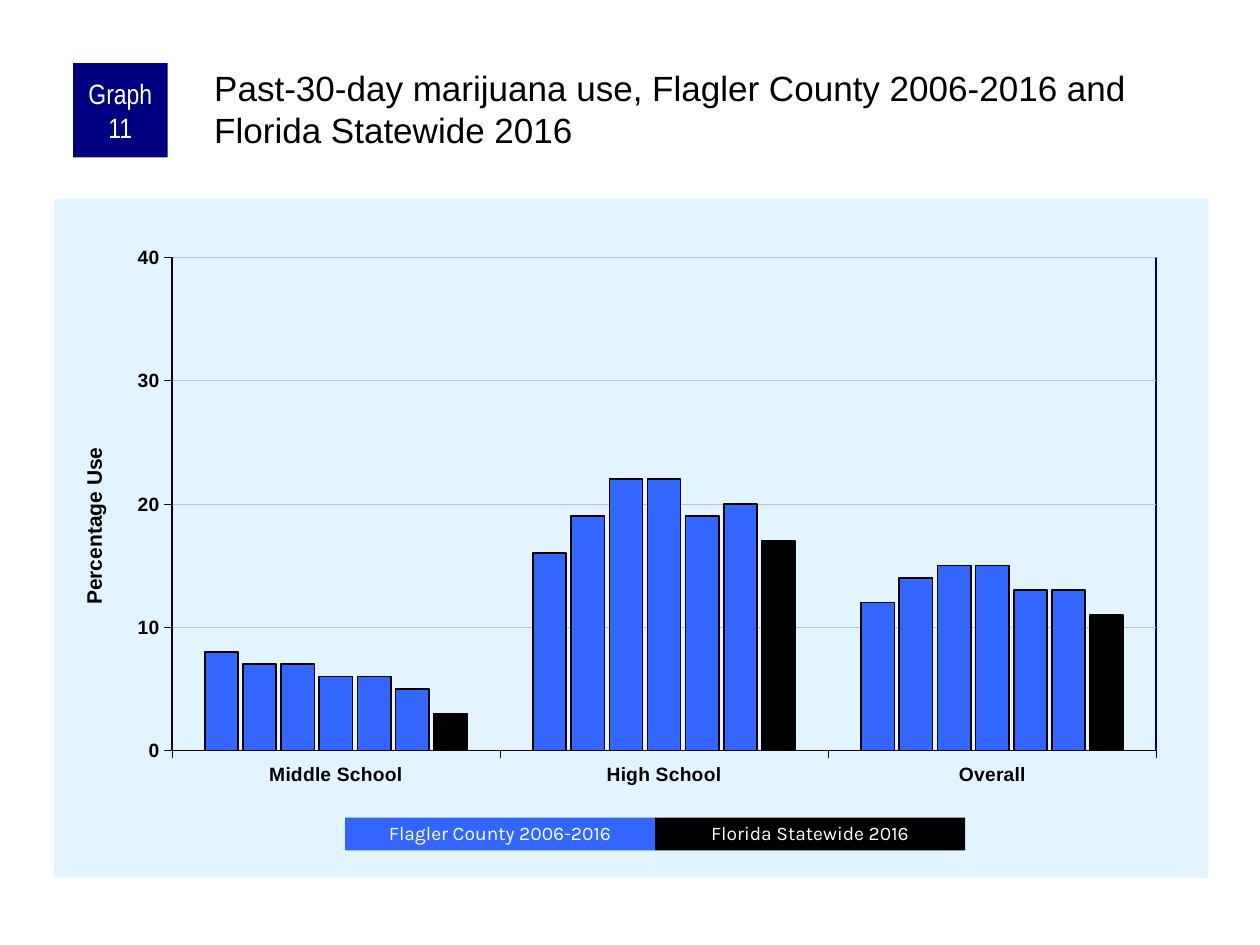
"""Build the slide on past-30-day marijuana use in Flagler County."""
from dataclasses import dataclass

from pptx import Presentation
from pptx.chart.data import CategoryChartData
from pptx.dml.color import RGBColor
from pptx.enum.chart import XL_CHART_TYPE, XL_TICK_MARK
from pptx.enum.shapes import MSO_SHAPE
from pptx.enum.text import MSO_ANCHOR, MSO_AUTO_SIZE, PP_ALIGN
from pptx.oxml import parse_xml
from pptx.oxml.ns import nsdecls, qn
from pptx.util import Inches, Pt

CLUSTERED = XL_CHART_TYPE.COLUMN_CLUSTERED
TICK_OUT, TICK_NONE = XL_TICK_MARK.OUTSIDE, XL_TICK_MARK.NONE
RECTANGLE = MSO_SHAPE.RECTANGLE
TOP, MIDDLE = MSO_ANCHOR.TOP, MSO_ANCHOR.MIDDLE
NO_FIT = MSO_AUTO_SIZE.NONE
LEFT, CENTER = PP_ALIGN.LEFT, PP_ALIGN.CENTER


@dataclass(frozen=True)
class Theme:
    """Colours, fonts and type sizes of the slide."""
    black: str = "000000"
    white: str = "FFFFFF"
    navy: str = "000080"
    county: str = "3366FF"
    panel: str = "E1F4FF"
    grid: str = "C0C0C0"
    main_font: str = "Arial"
    badge_font: str = "Arial Narrow"
    key_font: str = "Karla"
    title_size: float = 20
    badge_size: float = 16
    axis_title_size: float = 12
    label_size: float = 11
    chart_size: float = 8


THEME = Theme()


@dataclass(frozen=True)
class Area:
    """A rectangle in inches."""
    left: float
    top: float
    width: float
    height: float

    def lengths(self) -> tuple:
        """Return the four lengths for python-pptx."""
        return tuple(map(Inches, (self.left, self.top, self.width, self.height)))


@dataclass(frozen=True)
class Label:
    """A filled box with centred white text."""
    text: str
    area: Area
    fill: str
    font: str
    size: float
    side_inset: float = 0.1
    end_inset: float = 0.05
    line_spacing: float = 1.0


@dataclass(frozen=True)
class Survey:
    """The percentages of one survey across the school levels."""
    values: tuple
    color: str = THEME.county


LEVELS = ("Middle School", "High School", "Overall")
SURVEYS = (
    Survey((8, 16, 12)),
    Survey((7, 19, 14)),
    Survey((7, 22, 15)),
    Survey((6, 22, 15)),
    Survey((6, 19, 13)),
    Survey((5, 20, 13)),
    Survey((3, 17, 11), THEME.black),
)
BADGE = Label("Graph 11", Area(0.58, 0.5, 0.75, 0.75), THEME.navy,
              THEME.badge_font, THEME.badge_size, 0.05, 0)
KEY = (("Flagler County 2006-2016", THEME.county),
       ("Florida Statewide 2016", THEME.black))
KEY_AREA = Area(2.74, 6.49, 2.46, 0.26)


def style_font(font, name: str, size: float, color: str, bold: bool = False) -> None:
    """Set typeface, size, colour and weight."""
    font.name, font.size, font.bold = name, Pt(size), bold
    font.color.rgb = RGBColor.from_string(color)


def style_line(line, color: str, width: float) -> None:
    """Set the colour and width of a line."""
    line.color.rgb = RGBColor.from_string(color)
    line.width = Pt(width)


def style_fill(fill, color: str) -> None:
    """Give a solid fill."""
    fill.solid()
    fill.fore_color.rgb = RGBColor.from_string(color)


def add_label(slide, label: Label) -> None:
    """Draw one filled label."""
    box = slide.shapes.add_shape(RECTANGLE, *label.area.lengths())
    box.shadow.inherit = False
    style_fill(box.fill, label.fill)
    box.line.fill.background()
    frame = box.text_frame
    frame.word_wrap, frame.vertical_anchor = True, MIDDLE
    frame.margin_left = frame.margin_right = Inches(label.side_inset)
    frame.margin_top = frame.margin_bottom = Inches(label.end_inset)
    frame.text = label.text
    para = frame.paragraphs[0]
    para.alignment, para.line_spacing = CENTER, label.line_spacing
    style_font(para.runs[0].font, label.font, label.size, THEME.white)


def set_title(slide, text: str, area: Area) -> None:
    """Place and format the title placeholder."""
    title = slide.shapes.title
    title.left, title.top, title.width, title.height = area.lengths()
    frame = title.text_frame
    frame.text = text
    frame.word_wrap, frame.auto_size, frame.vertical_anchor = True, NO_FIT, TOP
    frame.margin_left = frame.margin_top = Inches(0.03)
    frame.margin_right = frame.margin_bottom = 0
    para = frame.paragraphs[0]
    para.alignment = LEFT
    style_font(para.runs[0].font, THEME.main_font, THEME.title_size, THEME.black)


def make_layout(target: str = "", **lengths: float):
    """Return a manual chart layout from fractions of the chart."""
    inner = f'<c:layoutTarget val="{target}"/>' if target else ""
    modes = "".join(f'<c:{key}Mode val="edge"/>' for key in ("x", "y"))
    sizes = "".join(f'<c:{key} val="{value}"/>' for key, value in lengths.items())
    return parse_xml(f'<c:layout {nsdecls("c")}><c:manualLayout>{inner}{modes}{sizes}'
                     '</c:manualLayout></c:layout>')


def make_surface(fill: str, line: str):
    """Return the fill and outline of a chart area."""
    return parse_xml(f'<c:spPr {nsdecls("c", "a")}>{fill}{line}</c:spPr>')


def set_layout(parent, layout, position: int) -> None:
    """Replace the layout of a chart part."""
    for old in parent.findall(qn("c:layout")):
        parent.remove(old)
    parent.insert(position, layout)


def style_axis(axis) -> None:
    """Format the line, ticks and labels of an axis."""
    axis.major_tick_mark, axis.minor_tick_mark = TICK_OUT, TICK_NONE
    style_line(axis.format.line, THEME.black, 0.25)
    style_font(axis.tick_labels.font, THEME.main_font, THEME.label_size, THEME.black, True)


def add_usage_chart(slide, area: Area) -> None:
    """Draw the clustered columns by school level."""
    data = CategoryChartData()
    data.categories = LEVELS
    for number, survey in enumerate(SURVEYS, 1):
        data.add_series(f"Series {number}", survey.values)
    chart = slide.shapes.add_chart(CLUSTERED, *area.lengths(), data).chart
    chart.has_title = chart.has_legend = False
    style_font(chart.font, THEME.main_font, THEME.chart_size, THEME.black)

    plot = chart.plots[0]
    plot.gap_width, plot.overlap, plot.vary_by_categories = 200, -15, False
    for series, survey in zip(plot.series, SURVEYS):
        style_fill(series.format.fill, survey.color)
        style_line(series.format.line, THEME.black, 1)

    style_axis(chart.category_axis)
    axis = chart.value_axis
    style_axis(axis)
    axis.minimum_scale, axis.maximum_scale, axis.major_unit = 0, 40, 10
    style_line(axis.major_gridlines.format.line, THEME.grid, 0.25)
    frame = axis.axis_title.text_frame
    frame.text = "Percentage Use"
    style_font(frame.paragraphs[0].runs[0].font, THEME.main_font,
               THEME.axis_title_size, THEME.black, True)

    space = chart._chartSpace
    title = space.find(".//" + qn("c:valAx")).find(qn("c:title"))
    set_layout(title, make_layout(x=0.02, y=0.36), 1)
    plot_area = space.find(".//" + qn("c:plotArea"))
    set_layout(plot_area, make_layout("inner", x=0.102, y=0.086, w=0.853, h=0.726), 0)
    solid = '<a:solidFill><a:srgbClr val="{}"/></a:solidFill>'.format
    plot_area.append(make_surface(
        "<a:noFill/>", f'<a:ln w="{Pt(1)}">{solid(THEME.navy)}</a:ln>'))
    space.find(qn("c:chart")).addnext(make_surface(
        solid(THEME.panel), "<a:ln><a:noFill/></a:ln>"))


def main() -> None:
    """Assemble and save the deck."""
    deck = Presentation()
    deck.slide_width, deck.slide_height = Inches(10), Inches(7.5)
    slide = deck.slides.add_slide(deck.slide_layouts[5])
    add_usage_chart(slide, Area(0.43, 1.58, 9.16, 5.39))
    add_label(slide, BADGE)
    set_title(slide, "Past-30-day marijuana use, Flagler County 2006-2016 and "
              "Florida Statewide 2016", Area(1.67, 0.5, 7.92, 0.83))
    for index, (text, color) in enumerate(KEY):
        area = Area(KEY_AREA.left + index * KEY_AREA.width, KEY_AREA.top,
                    KEY_AREA.width, KEY_AREA.height)
        add_label(slide, Label(text, area, color, THEME.key_font,
                               THEME.label_size, line_spacing=0.9))
    deck.save("out.pptx")


if __name__ == "__main__":
    main()
